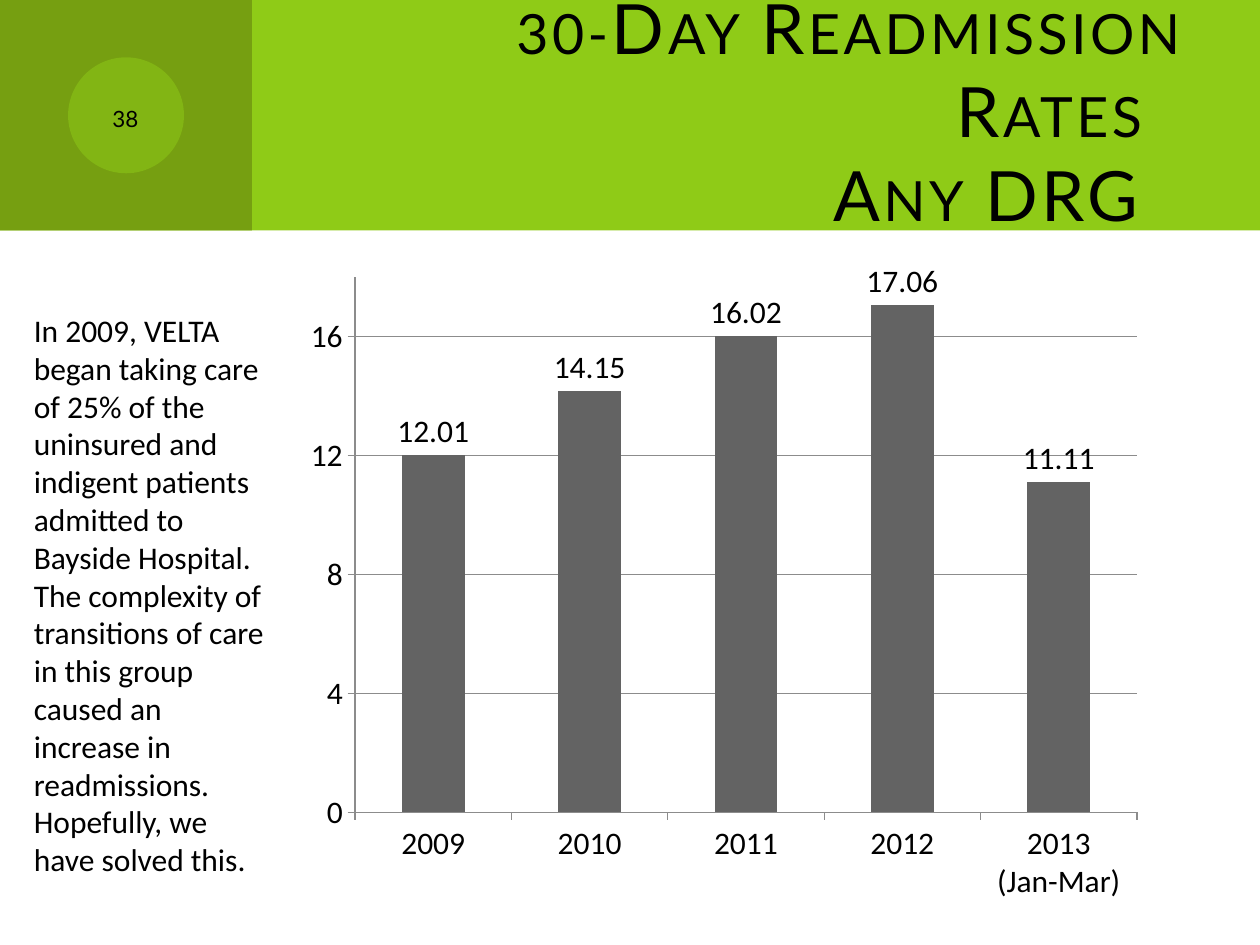
from lxml import etree
from pptx import Presentation, util as u
from pptx.chart.data import CategoryChartData
from pptx.dml.color import RGBColor
from pptx.enum import chart as ch, shapes, text
from pptx.oxml.ns import qn

HEADING = "30-Day Readmission Rates \vAny DRG "
PAGE = "38"
NOTE = ("In 2009, VELTA began taking care of 25% of the uninsured and indigent "
        "patients admitted to Bayside Hospital.  The complexity of transitions of "
        "care in this group caused an increase in readmissions.  Hopefully, we "
        "have solved this.")
RATES = {"2009": 12.01, "2010": 14.15, "2011": 16.02, "2012": 17.06,
         "2013\n(Jan-Mar)": 11.11}

WIDTH, HEIGHT, BAND, CORNER, DISC = 10, 7.5, 1.83, 2, 0.92
LIME, OLIVE, GRAY, RULE, BLACK = "8FCB17", "769F11", "636363", "8C8C8C", "000000"
BAND_PARTS = [
    (shapes.MSO_SHAPE.RECTANGLE, (0, 0, WIDTH, BAND), LIME),
    (shapes.MSO_SHAPE.RECTANGLE, (0, 0, CORNER, BAND), OLIVE),
    (shapes.MSO_SHAPE.OVAL,
     ((CORNER - DISC) / 2, (BAND - DISC) / 2, DISC, DISC), LIME),
]


def color(hex_value):
    return RGBColor.from_string(hex_value)


def inches(box):
    return [u.Inches(side) for side in box]


def style(font, name, size):
    font.name, font.size = name, u.Pt(size)
    font.color.rgb = color(BLACK)


def write(frame, words, name, size, align, anchor, **run_props):
    frame.text = words
    frame.word_wrap = True
    frame.auto_size = text.MSO_AUTO_SIZE.NONE
    frame.vertical_anchor = anchor
    frame.paragraphs[0].alignment = align
    for run in frame.paragraphs[0].runs:
        style(run.font, name, size)
        for key, value in run_props.items():
            run.font._element.set(key, value)


def draw_band(slide):
    for preset, box, fill in BAND_PARTS:
        part = slide.shapes.add_shape(preset, *inches(box))
        part.shadow.inherit = False
        part.fill.solid()
        part.fill.fore_color.rgb = color(fill)
        part.line.fill.background()
    disc_color = part._element.spPr.find(".//" + qn("a:srgbClr"))
    etree.SubElement(disc_color, qn("a:alpha"), val="50000")


def draw_rates(slide):
    data = CategoryChartData()
    data.categories = list(RATES)
    data.add_series("Series 1", list(RATES.values()))
    rates = slide.shapes.add_chart(ch.XL_CHART_TYPE.COLUMN_CLUSTERED,
                                   *inches((2.33, 2.08, 6.83, 5.17)), data).chart
    rates.has_legend = rates.has_title = False
    style(rates.font, "Calibri", 18)

    bars = rates.plots[0]
    bars.gap_width, bars.vary_by_categories = 150, False
    bars.series[0].format.fill.solid()
    bars.series[0].format.fill.fore_color.rgb = color(GRAY)
    bars.has_data_labels = True
    labels = bars.data_labels
    labels.show_value = True
    labels.number_format, labels.number_format_is_linked = "0.00", False
    labels.position = ch.XL_LABEL_POSITION.OUTSIDE_END
    style(labels.font, "Calibri", 18)

    scale = rates.value_axis
    scale.minimum_scale, scale.maximum_scale, scale.major_unit = 0, 18, 4
    scale.has_major_gridlines = True
    rates.category_axis.has_major_gridlines = False
    for axis in (scale, rates.category_axis):
        axis.major_tick_mark = ch.XL_TICK_MARK.OUTSIDE
        axis.minor_tick_mark = ch.XL_TICK_MARK.NONE
        style(axis.tick_labels.font, "Calibri", 18)
    for rule in (scale, rates.category_axis, scale.major_gridlines):
        rule.format.line.color.rgb = color(RULE)
        rule.format.line.width = u.Pt(0.75)


def main():
    deck = Presentation()
    deck.slide_width, deck.slide_height = inches((WIDTH, HEIGHT))
    slide = deck.slides.add_slide(deck.slide_layouts[5])
    draw_band(slide)

    heading = slide.shapes.title
    slide.shapes._spTree.append(heading._element)
    heading.left, heading.top, heading.width, heading.height = inches(
        (2.67, 0.25, 6.83, 1.25))
    write(heading.text_frame, HEADING, "Lato", 39.6, text.PP_ALIGN.RIGHT,
          text.MSO_ANCHOR.MIDDLE, cap="small", spc="200")

    draw_rates(slide)

    page = slide.shapes.add_textbox(*inches((0.58, 0.67, 0.83, 0.5)))
    write(page.text_frame, PAGE, "Lato", 16, text.PP_ALIGN.CENTER,
          text.MSO_ANCHOR.MIDDLE, cap="small")
    note = slide.shapes.add_textbox(*inches((0.17, 2.42, 2.08, 4.64)))
    write(note.text_frame, NOTE, "Calibri", 18, text.PP_ALIGN.LEFT,
          text.MSO_ANCHOR.TOP)

    deck.save("out.pptx")


if __name__ == "__main__":
    main()
